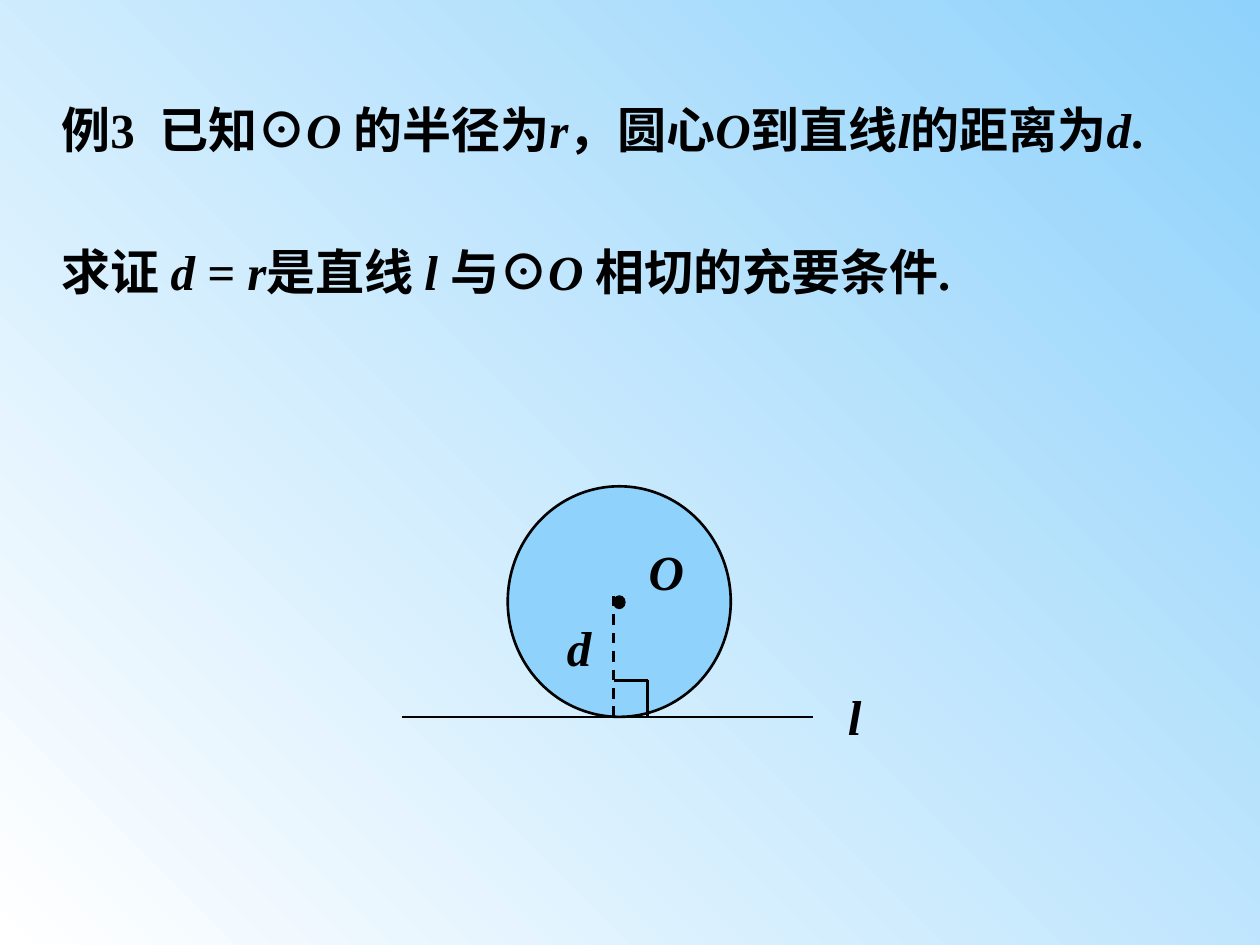
from lxml import etree
from pptx import Presentation
from pptx.dml.color import RGBColor
from pptx.enum.dml import MSO_LINE
from pptx.enum.shapes import MSO_CONNECTOR, MSO_SHAPE
from pptx.enum.text import MSO_AUTO_SIZE
from pptx.oxml.ns import qn
from pptx.util import Inches, Pt

STRAIGHT, OVAL, DASH = MSO_CONNECTOR.STRAIGHT, MSO_SHAPE.OVAL, MSO_LINE.DASH
FIT = MSO_AUTO_SIZE.SHAPE_TO_FIT_TEXT
COLORS = {"ink": "000000", "disc": "8FD2FB", "paper": "FFFFFF"}
RGB = {name: RGBColor.from_string(c) for name, c in COLORS.items()}

prs = Presentation()
prs.slide_width, prs.slide_height = Inches(10), Inches(7.5)
COL, ROW = prs.slide_width // 100, prs.slide_height // 75
s = prs.slides.add_slide(prs.slide_layouts[6])

bg = s.background.fill
bg.gradient()
bg.gradient_angle = 45
for stop, name, pos in zip(bg.gradient_stops, ("paper", "disc"), (0, 1)):
    stop.color.rgb = RGB[name]
    stop.position = pos


def grid(*cells):
    return [round(c * (ROW if i % 2 else COL)) for i, c in enumerate(cells)]


def add_text(paragraphs, box, size=28, spacing=1.0, gap=14, wrap=True):
    tf = s.shapes.add_textbox(*grid(*box)).text_frame
    tf.word_wrap = wrap
    tf.auto_size = FIT
    for i, segments in enumerate(paragraphs):
        p = tf.add_paragraph() if i else tf.paragraphs[0]
        p.line_spacing = spacing
        if i:
            p.space_before = Pt(gap)
        for j, text in enumerate(segments.split("|")):
            if text:
                r = p.add_run()
                r.text = text
                r.font.name = "Times New Roman"
                r.font.size = Pt(size)
                r.font.bold = True
                r.font.italic = j % 2 == 1
                r.font.color.rgb = RGB["ink"]


add_text(["例3  已知⊙|O |的半径为|r|，圆心|O|到直线|l|的距离为|d|.",
          "求证 |d = r|是直线 |l |与⊙|O| 相切的充要条件."],
         (3.9, 2.7, 90.2, 22.2), spacing=2.0)

tangent_y, foot_x, corner_x, corner_y = 56.9, 48.7, 51.4, 54

for box, fill, width in (((40.3, 38.6, 17.7, 18.3), "disc", 1.5),
                         ((foot_x, 47.3, 0.9, 1), "ink", 0.75)):
    sp = s.shapes.add_shape(OVAL, *grid(*box))
    sp.shadow.inherit = False
    sp.fill.solid()
    sp.fill.fore_color.rgb = RGB[fill]
    sp.line.color.rgb = RGB["ink"]
    sp.line.width = Pt(width)

for ends, dash in (((31.9, tangent_y, 64.5, tangent_y), None),
                   ((foot_x, 47.3, foot_x, tangent_y), DASH),
                   ((foot_x, corner_y, corner_x, corner_y), None),
                   ((corner_x, corner_y, corner_x, tangent_y), None)):
    line = s.shapes.add_connector(STRAIGHT, *grid(*ends))
    line.line.color.rgb = RGB["ink"]
    line.line.width = Pt(1.5)
    if dash:
        line.line.dash_style = dash
    etree.SubElement(line._element.spPr, qn("a:effectLst"))

add_text(["|l"], (66.3, 54, 6.5, 5.7))
add_text(["|O"], (50.5, 42.5, 4.7, 5.7))
add_text(["|d"], (44, 46.2, 4, 8.1), spacing=1.5, wrap=False)

prs.save("out.pptx")
